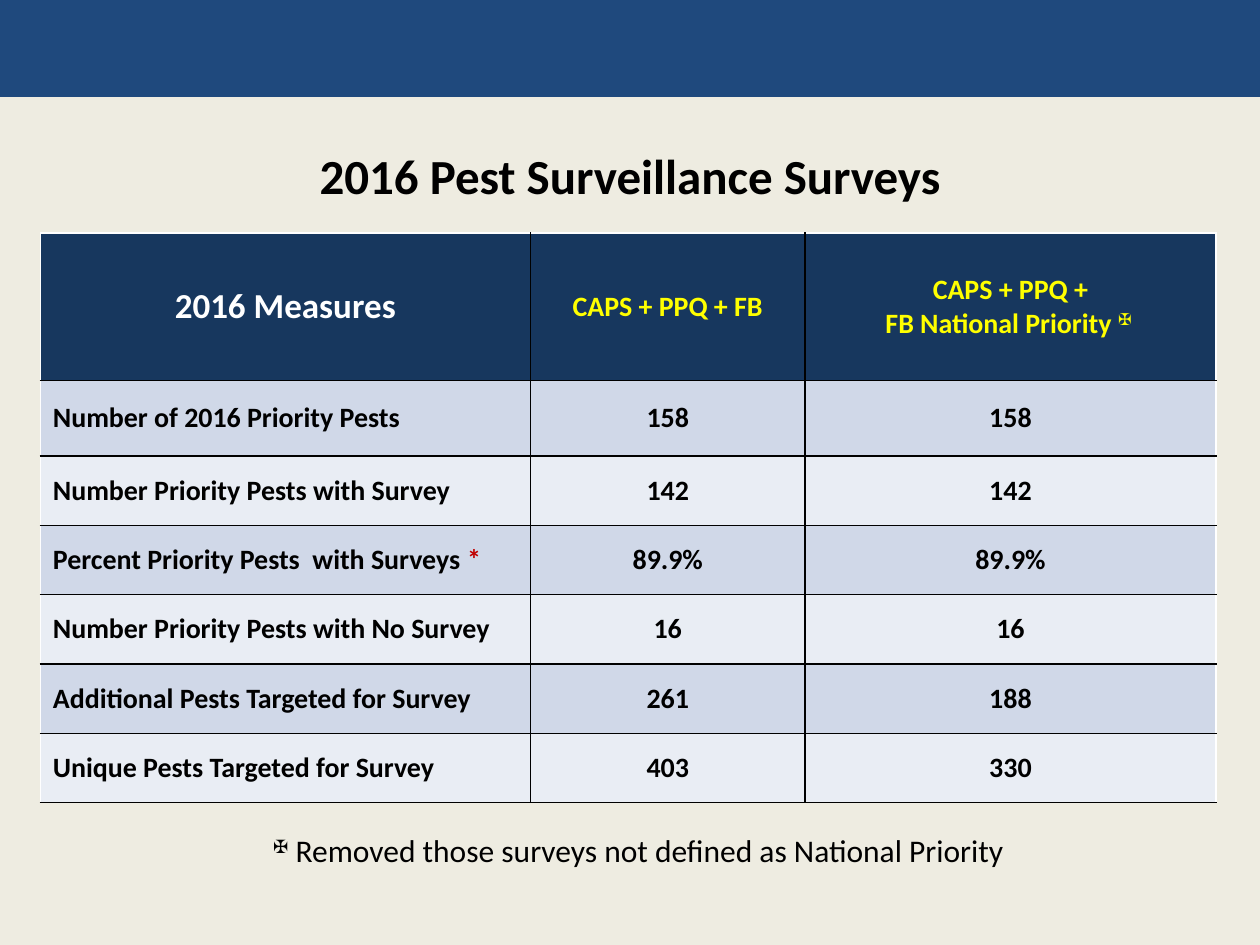
from pptx import Presentation
from pptx.dml.color import RGBColor
from pptx.enum.shapes import MSO_SHAPE as Shape
from pptx.enum.text import MSO_ANCHOR as Anchor, PP_ALIGN as Align
from pptx.oxml import parse_xml
from pptx.oxml.ns import nsdecls
from pptx.util import Inches, Pt

BLACK = RGBColor(0x00, 0x00, 0x00)
WHITE = RGBColor(0xFF, 0xFF, 0xFF)
CREAM = RGBColor(0xEE, 0xEC, 0xE1)
BLUE = RGBColor(0x1F, 0x49, 0x7D)
NAVY = RGBColor(0x17, 0x37, 0x5E)
YELLOW = RGBColor(0xFF, 0xFF, 0x00)
RED = RGBColor(0xC0, 0x00, 0x00)
BANDS = [RGBColor(0xD0, 0xD8, 0xE8), RGBColor(0xE9, 0xED, 0xF4)]

# Content: a cell is a list of lines, a line is a list of (text, style) runs
TITLE = "2016 Pest Surveillance Surveys"
HEAD = [
    [[("2016 Measures", {"size": 20, "color": WHITE})]],
    [[("CAPS + PPQ + FB", {"color": YELLOW})]],
    [[("CAPS + PPQ +", {"color": YELLOW})],
     [("FB National Priority ", {"color": YELLOW}),
      ("✠ ", {"color": YELLOW, "up": True})]],
]
BODY = [
    ("Number of 2016 Priority Pests", "158", "158"),
    ("Number Priority Pests with Survey", "142", "142"),
    ("Percent Priority Pests  with Surveys *", "89.9%", "89.9%"),
    ("Number Priority Pests with No Survey", "16", "16"),
    ("Additional Pests Targeted for Survey", "261", "188"),
    ("Unique Pests Targeted for Survey", "403", "330"),
]
NOTE = [("✠", {"up": True}),
        (" Removed those surveys not defined as National Priority", {})]
COLS = [3.89, 2.18, 3.26]
ROWS = [1.17, 0.6] + [0.55] * 5


def add_run(para, text, size=16, color=BLACK, bold=True, up=False):
    run = para.add_run()
    run.text = text
    font = run.font
    font.name, font.size, font.bold = "Calibri", Pt(size), bold
    font.color.rgb = color
    if up:
        run._r.get_or_add_rPr().set("baseline", "30000")
    return run


def add_glow(run, blur, dist, alpha):
    """Give a run a soft text shadow."""
    fill = run._r.get_or_add_rPr().find("{*}solidFill")
    fill.addnext(parse_xml(
        f'<a:effectLst {nsdecls("a")}><a:outerShdw blurRad="{Pt(blur)}" '
        f'dist="{Pt(dist)}" dir="2700000"><a:srgbClr val="{BLACK}">'
        f'<a:alpha val="{alpha * 1000}"/></a:srgbClr></a:outerShdw></a:effectLst>'))


def add_edges(cell, edges):
    for side, color in edges.items():
        cell._tc.get_or_add_tcPr().append(parse_xml(
            f'<a:ln{side} {nsdecls("a")} w="{Pt(1)}"><a:solidFill>'
            f'<a:srgbClr val="{color}"/></a:solidFill></a:ln{side}>'))


def fill_cell(cell, lines, align):
    cell.vertical_anchor = Anchor.MIDDLE
    frame = cell.text_frame
    for i, line in enumerate(lines):
        para = frame.add_paragraph() if i else frame.paragraphs[0]
        para.alignment = align
        for text, style in line:
            run = add_run(para, text, **style)
            if align == Align.LEFT:
                add_glow(run, 2, 1, 25)


def split_star(text):
    """Set a closing asterisk in red."""
    base = text.rstrip("*")
    return [(base, {})] + ([("*", {"color": RED})] if base != text else [])


prs = Presentation()
prs.slide_width, prs.slide_height = Inches(10), Inches(7.5)
slide = prs.slides.add_slide(prs.slide_layouts[5])
slide.background.fill.solid()
slide.background.fill.fore_color.rgb = CREAM

# Top band, behind the title
band = slide.shapes.add_shape(Shape.RECTANGLE, 0, 0, prs.slide_width, Inches(0.77))
band.shadow.inherit = False
band.fill.solid()
band.fill.fore_color.rgb = BLUE
band.line.fill.background()
slide.shapes._spTree.insert(2, band._element)

# Title
title = slide.shapes.title
title.left, title.top, title.width, title.height = map(Inches, (0.5, 1, 9, 0.78))
title.text_frame.vertical_anchor = Anchor.MIDDLE
para = title.text_frame.paragraphs[0]
para.alignment = Align.CENTER
add_glow(add_run(para, TITLE, size=28), 3, 3, 45)

# Table
grid = slide.shapes.add_table(
    len(ROWS), len(COLS), Inches(0.32), Inches(1.85),
    Inches(sum(COLS)), Inches(sum(ROWS))).table
for col, width in zip(grid.columns, COLS):
    col.width = Inches(width)
for row, height in zip(grid.rows, ROWS):
    row.height = Inches(height)

cells = [HEAD] + [[[split_star(text)] for text in row] for row in BODY]
last = len(COLS) - 1
for r, row in enumerate(cells):
    for c, lines in enumerate(row):
        cell = grid.cell(r, c)
        fill_cell(cell, lines, Align.LEFT if r and not c else Align.CENTER)
        if r and c:
            cell.margin_left = cell.margin_right = 0
            cell.margin_top = cell.margin_bottom = 0
        add_edges(cell, {"L": BLACK if c else WHITE,
                         "R": BLACK if c < last else WHITE,
                         "T": BLACK if r else WHITE,
                         "B": BLACK})
        cell.fill.solid()
        cell.fill.fore_color.rgb = BANDS[(r - 1) % 2] if r else NAVY

# Footnote
note = slide.shapes.add_textbox(*map(Inches, (2.07, 6.55, 6.06, 0.4)))
note.text_frame.word_wrap = False
for text, style in NOTE:
    add_run(note.text_frame.paragraphs[0], text, size=18, bold=False, **style)

prs.save("out.pptx")
